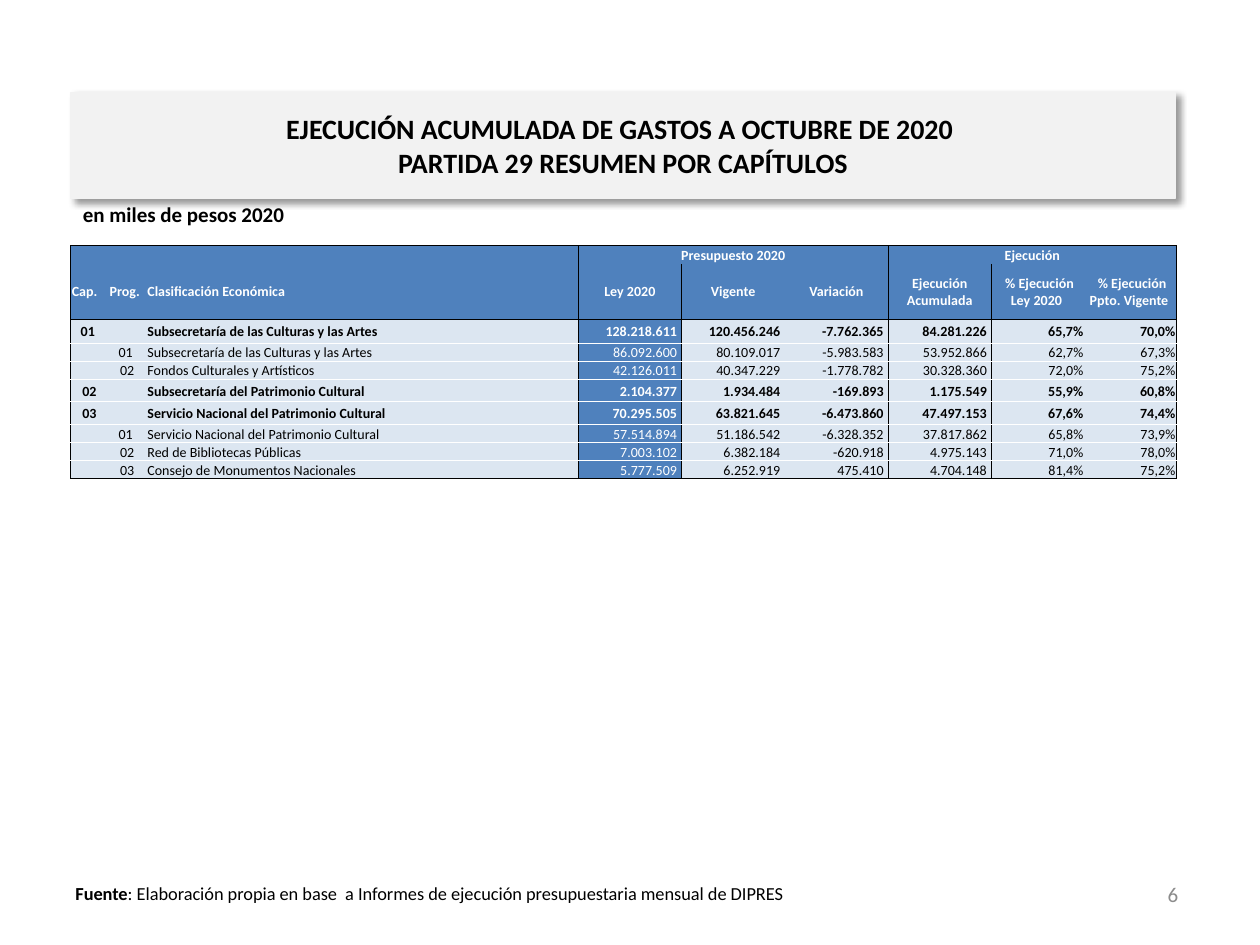
from dataclasses import dataclass

from lxml.etree import SubElement
from pptx import Presentation
from pptx.dml.color import RGBColor
from pptx.enum.text import MSO_ANCHOR, MSO_AUTO_SIZE, PP_ALIGN
from pptx.oxml.ns import qn
from pptx.util import Inches, Pt

FONT = "Calibri"
BLACK = RGBColor(0x00, 0x00, 0x00)
WHITE = RGBColor(0xFF, 0xFF, 0xFF)
GREY = RGBColor(0x8C, 0x8C, 0x8C)
PANEL = RGBColor(0xF2, 0xF2, 0xF2)
BLUE = RGBColor(0x4F, 0x81, 0xBD)
PALE_BLUE = RGBColor(0xDC, 0xE6, 0xF1)
NO_STYLE = "{2D5ABB26-0587-4C30-8999-92F81FD0307C}"

COL_WIDTHS = [0.3, 0.3, 3.43] + [0.82] * 4 + [0.74, 0.73]
HEADER_HEIGHTS = [0.14, 0.44]
GROUP_STARTS = (0, 3, 6)
GROUP_ENDS = (2, 5, 8)
LEY_COL = 3
GROUP_HEADS = {3: "Presupuesto 2020", 6: "Ejecución"}
HEADS = ["Cap.", "Prog.", "Clasificación Económica", "Ley 2020", "Vigente", "Variación",
         "Ejecución Acumulada", " % Ejecución Ley 2020 ", " % Ejecución Ppto. Vigente "]
BODY_ALIGNS = [PP_ALIGN.CENTER] * 2 + [PP_ALIGN.JUSTIFY] + [PP_ALIGN.RIGHT] * 6


@dataclass(frozen=True)
class BudgetLine:
    cap: str
    prog: str
    name: str
    amounts: str
    rates: str
    height: float = 0.14

    def cells(self) -> list[str]:
        """Amounts keep one trailing space, which sets them off the column edge."""
        amounts = [f"{a} " for a in self.amounts.split()]
        return [self.cap, self.prog, self.name, *amounts, *self.rates.split()]


LINES = [
    BudgetLine("01 ", "", "Subsecretaría de las Culturas y las Artes",
               "128.218.611 120.456.246 -7.762.365 84.281.226", "65,7% 70,0%", 0.19),
    BudgetLine("", "01 ", "Subsecretaría de las Culturas y las Artes",
               "86.092.600 80.109.017 -5.983.583 53.952.866", "62,7% 67,3%"),
    BudgetLine("", "02", "Fondos Culturales y Artísticos",
               "42.126.011 40.347.229 -1.778.782 30.328.360", "72,0% 75,2%"),
    BudgetLine("02", "", "Subsecretaría del Patrimonio Cultural",
               "2.104.377 1.934.484 -169.893 1.175.549", "55,9% 60,8%", 0.18),
    BudgetLine("03", "", "Servicio Nacional del Patrimonio Cultural",
               "70.295.505 63.821.645 -6.473.860 47.497.153", "67,6% 74,4%", 0.18),
    BudgetLine("", "01 ", "Servicio Nacional del Patrimonio Cultural",
               "57.514.894 51.186.542 -6.328.352 37.817.862", "65,8% 73,9%"),
    BudgetLine("", "02", "Red de Bibliotecas Públicas",
               "7.003.102 6.382.184 -620.918 4.975.143", "71,0% 78,0%"),
    BudgetLine("", "03", "Consejo de Monumentos Nacionales",
               "5.777.509 6.252.919 475.410 4.704.148", "81,4% 75,2%"),
]
LAST_ROW = len(HEADER_HEIGHTS) + len(LINES) - 1


def format_paragraph(p, size: float, color: RGBColor, bold: bool | None = None,
                     align: PP_ALIGN = PP_ALIGN.LEFT) -> None:
    p.alignment = align
    p.font.name = FONT
    p.font.size = Pt(size)
    p.font.bold = bold
    p.font.color.rgb = color


def add_text(s, left: float, top: float, width: float, height: float):
    tf = s.shapes.add_textbox(*map(Inches, (left, top, width, height))).text_frame
    tf.word_wrap = True
    return tf


def add_shadow(sp) -> None:
    effects = SubElement(sp._element.spPr, qn("a:effectLst"))
    shadow = SubElement(effects, qn("a:outerShdw"), blurRad=str(Pt(4)), dist=str(Pt(3)),
                        dir="2700000", algn="tl", rotWithShape="0")
    color = SubElement(shadow, qn("a:srgbClr"), val=str(BLACK))
    SubElement(color, qn("a:alpha"), val="40000")


def add_title(s, text: str) -> None:
    sp = s.shapes.title
    sp.left, sp.top, sp.width, sp.height = map(Inches, (0.56, 0.83, 8.77, 0.65))
    sp.fill.solid()
    sp.fill.fore_color.rgb = PANEL
    sp.line.color.rgb = PANEL
    sp.line.width = Pt(0.75)
    add_shadow(sp)
    tf = sp.text_frame
    tf.text = text
    tf.word_wrap = True
    tf.vertical_anchor = MSO_ANCHOR.MIDDLE
    tf.auto_size = MSO_AUTO_SIZE.SHAPE_TO_FIT_TEXT
    format_paragraph(tf.paragraphs[0], 16, BLACK, True, PP_ALIGN.CENTER)


def cell_borders(row: int, col: int) -> dict[str, RGBColor]:
    """Black rules frame the header, the body and each column group; white ones part body rows."""
    first_body = len(HEADER_HEIGHTS)
    borders = {}
    if col in GROUP_STARTS:
        borders["lnL"] = BLACK
    if col in GROUP_ENDS or (row == 0 and col in GROUP_HEADS):
        borders["lnR"] = BLACK
    if row in (0, first_body):
        borders["lnT"] = BLACK
    elif row > first_body:
        borders["lnT"] = WHITE
    if row in (first_body - 1, LAST_ROW):
        borders["lnB"] = BLACK
    elif row >= first_body:
        borders["lnB"] = WHITE
    return borders


def fill_cell(cell, text: str, fill: RGBColor, borders: dict[str, RGBColor], bold: bool,
              align: PP_ALIGN, anchor: MSO_ANCHOR = MSO_ANCHOR.MIDDLE) -> None:
    cell.margin_left = cell.margin_right = cell.margin_top = Inches(0.01)
    cell.margin_bottom = 0
    cell.vertical_anchor = anchor
    tc_pr = cell._tc.get_or_add_tcPr()
    for side, color in borders.items():
        line = SubElement(tc_pr, qn(f"a:{side}"), w=str(Pt(0.5)))
        SubElement(SubElement(line, qn("a:solidFill")), qn("a:srgbClr"), val=str(color))
    cell.fill.solid()
    cell.fill.fore_color.rgb = fill
    p = cell.text_frame.paragraphs[0]
    if text:
        p.text = text
    else:
        SubElement(p._p, qn("a:endParaRPr"), sz="800")
    format_paragraph(p, 8, WHITE if fill == BLUE else BLACK, bold, align)


def add_budget_table(s) -> None:
    heights = HEADER_HEIGHTS + [line.height for line in LINES]
    frame = s.shapes.add_table(len(heights), len(COL_WIDTHS), Inches(0.56), Inches(1.95),
                               Inches(8.77), Inches(sum(heights)))
    table = frame.table
    table.first_row = table.horz_banding = False
    table._tbl.tblPr.find(qn("a:tableStyleId")).text = NO_STYLE
    for column, width in zip(table.columns, COL_WIDTHS):
        column.width = Inches(width)
    for row, height in zip(table.rows, heights):
        row.height = Inches(height)

    for c, head in enumerate(HEADS):
        fill_cell(table.cell(0, c), GROUP_HEADS.get(c, ""), BLUE, cell_borders(0, c), True,
                  PP_ALIGN.CENTER, MSO_ANCHOR.BOTTOM)
        fill_cell(table.cell(1, c), head, BLUE, cell_borders(1, c), True,
                  PP_ALIGN.LEFT if c < LEY_COL else PP_ALIGN.CENTER)
    for c in GROUP_HEADS:
        table.cell(0, c).merge(table.cell(0, c + 2))
    for r, line in enumerate(LINES, start=len(HEADER_HEIGHTS)):
        for c, text in enumerate(line.cells()):
            fill_cell(table.cell(r, c), text, BLUE if c == LEY_COL else PALE_BLUE,
                      cell_borders(r, c), bool(line.cap), BODY_ALIGNS[c])


def add_source_note(s) -> None:
    p = add_text(s, 0.5, 6.95, 5.91, 0.28).paragraphs[0]
    format_paragraph(p, 10.5, BLACK)
    r = p.add_run()
    r.text = "Fuente"
    r.font.bold = True
    p.add_run().text = (": Elaboración propia en base  a Informes de ejecución "
                        "presupuestaria mensual de DIPRES")


def main() -> None:
    prs = Presentation()
    prs.slide_width, prs.slide_height = Inches(10), Inches(7.5)
    s = prs.slides.add_slide(prs.slide_layouts[5])

    add_source_note(s)
    add_title(s, "EJECUCIÓN ACUMULADA DE GASTOS A OCTUBRE DE 2020 \v"
                 "PARTIDA 29 RESUMEN POR CAPÍTULOS")

    tf = add_text(s, 7.12, 6.9, 2.33, 0.4)
    tf.text = "6"
    tf.vertical_anchor = MSO_ANCHOR.MIDDLE
    format_paragraph(tf.paragraphs[0], 12, GREY, align=PP_ALIGN.RIGHT)

    tf = add_text(s, 0.56, 1.55, 8.94, 0.41)
    tf.text = "en miles de pesos 2020"
    format_paragraph(tf.paragraphs[0], 12, BLACK, True)

    add_budget_table(s)
    prs.save("out.pptx")


if __name__ == "__main__":
    main()
